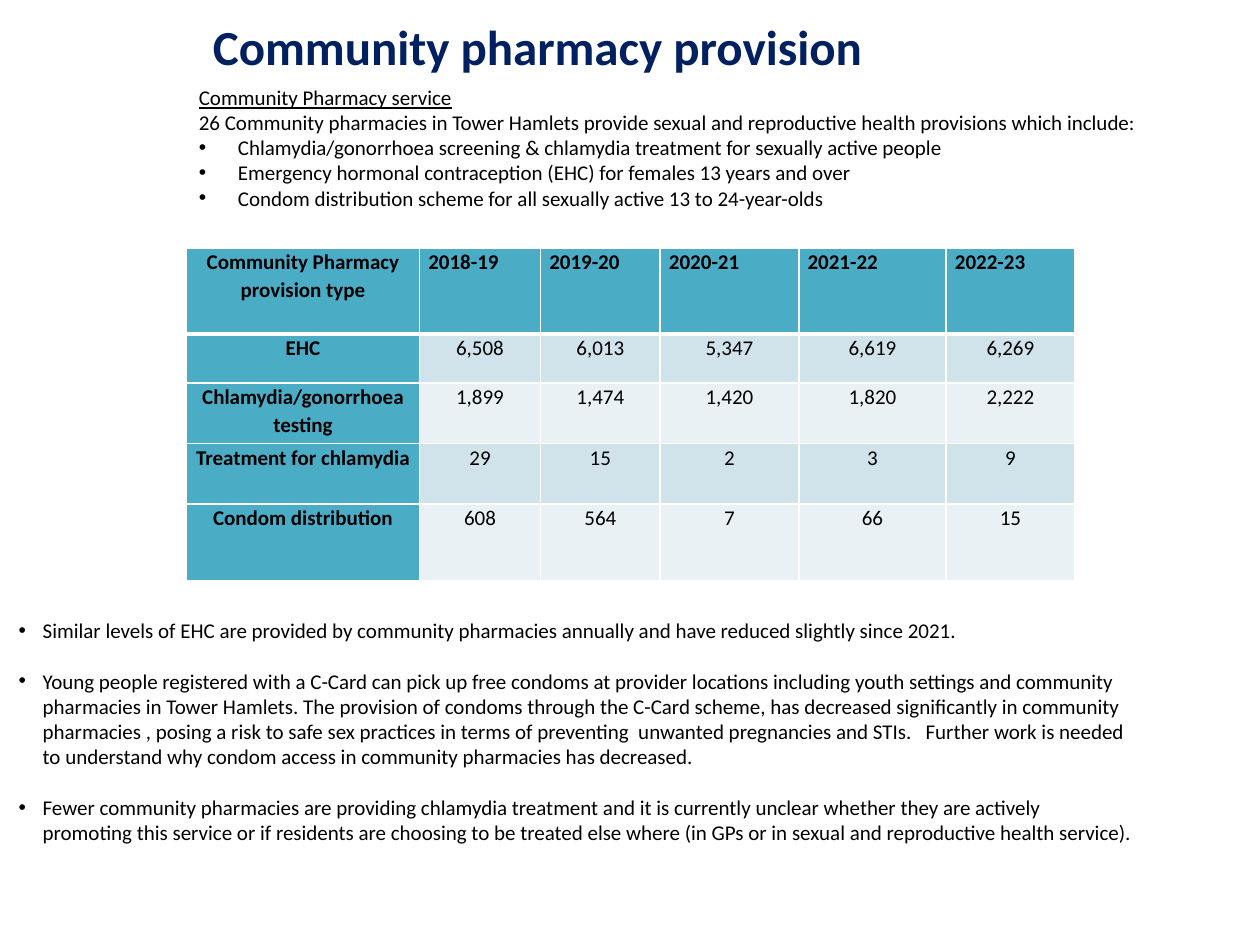
from dataclasses import dataclass

from lxml.etree import SubElement
from pptx import Presentation
from pptx.dml.color import RGBColor
from pptx.enum.text import MSO_ANCHOR, MSO_AUTO_SIZE, PP_ALIGN
from pptx.oxml.ns import qn
from pptx.slide import Slide
from pptx.table import _Cell
from pptx.util import Inches, Pt

FONT = "Calibri"
COLORS = {
    "title": "002060",
    "text": "000000",
    "border": "FFFFFF",
    "header": "4BACC6",
    "odd_row": "D0E3EA",
    "even_row": "E9F1F5",
}


@dataclass
class Box:
    left: float
    top: float
    width: float
    height: float

    def lengths(self) -> list:
        return [Inches(value) for value in (self.left, self.top, self.width, self.height)]


@dataclass
class Line:
    text: str
    indent: float = 0
    underline: bool = False
    space_before: float = 0


@dataclass
class TableRow:
    height: float
    cells: list[str]


INTRO_BOX = Box(1.48, 0.62, 8.06, 1.11)
INTRO = [
    Line("Community Pharmacy service", underline=True),
    Line("26 Community pharmacies in Tower Hamlets provide sexual and reproductive health provisions which include:"),
    Line("Chlamydia/gonorrhoea screening & chlamydia treatment for sexually active people", 0.31),
    Line("Emergency hormonal contraception (EHC) for females 13 years and over", 0.31),
    Line("Condom distribution scheme for all sexually active 13 to 24-year-olds", 0.31),
]

FINDINGS_BOX = Box(0.05, 4.85, 9.05, 2.12)
FINDINGS = [
    Line("Similar levels of EHC are provided by community pharmacies annually and have reduced slightly since 2021.", 0.19),
    Line(
        "Young people registered with a C-Card can pick up free condoms at provider locations including "
        "youth settings and community pharmacies in Tower Hamlets. The provision of condoms through the "
        "C-Card scheme, has decreased significantly in community pharmacies , posing a risk to safe sex "
        "practices in terms of preventing  unwanted pregnancies and STIs.   Further work is needed to "
        "understand why condom access in community pharmacies has decreased.",
        0.19,
        space_before=14.6,
    ),
    Line(
        "Fewer community pharmacies are providing chlamydia treatment and it is currently unclear whether "
        "they are actively  promoting this service or if residents are choosing to be treated else where "
        "(in GPs or in sexual and reproductive health service).",
        0.19,
        space_before=14.6,
    ),
]

TABLE_BOX = Box(1.48, 1.97, 7.05, 2.64)
COLUMN_WIDTHS = [1.85, 0.96, 0.95, 1.1, 1.17, 1.02]
TABLE_ROWS = [
    TableRow(0.68, ["Community Pharmacy provision type", "2018-19", "2019-20", "2020-21", "2021-22", "2022-23"]),
    TableRow(0.39, ["EHC", "6,508", "6,013", "5,347", "6,619", "6,269"]),
    TableRow(0.48, ["Chlamydia/gonorrhoea testing", "1,899", "1,474", "1,420", "1,820", "2,222"]),
    TableRow(0.48, ["Treatment for chlamydia", "29", "15", "2", "3", "9"]),
    TableRow(0.61, ["Condom distribution", "608", "564", "7", "66", "15"]),
]


def color(name: str) -> RGBColor:
    return RGBColor.from_string(COLORS[name])


def format_runs(paragraph, size: float, color_name: str, bold: bool = False, underline: bool = False) -> None:
    for run in paragraph.runs:
        run.font.name = FONT
        run.font.size = Pt(size)
        run.font.bold = bold
        run.font.underline = underline
        run.font.color.rgb = color(color_name)


def add_bullet(paragraph, indent: float) -> None:
    properties = paragraph._p.get_or_add_pPr()
    properties.set("marL", str(Inches(indent)))
    properties.set("indent", str(-Inches(indent)))
    SubElement(properties, qn("a:buFont"), typeface="Arial")
    SubElement(properties, qn("a:buChar"), char="•")


def add_title(slide: Slide, text: str, box: Box) -> None:
    title = slide.shapes.title
    title.left, title.top, title.width, title.height = box.lengths()
    text_frame = title.text_frame
    text_frame.text = text
    text_frame.auto_size = MSO_AUTO_SIZE.SHAPE_TO_FIT_TEXT
    paragraph = text_frame.paragraphs[0]
    paragraph.alignment = PP_ALIGN.LEFT
    format_runs(paragraph, 28, "title", bold=True)


def add_text(slide: Slide, box: Box, lines: list[Line]) -> None:
    text_frame = slide.shapes.add_textbox(*box.lengths()).text_frame
    text_frame.word_wrap = True
    text_frame.auto_size = MSO_AUTO_SIZE.SHAPE_TO_FIT_TEXT
    for index, line in enumerate(lines):
        paragraph = text_frame.add_paragraph() if index else text_frame.paragraphs[0]
        paragraph.text = line.text
        if line.space_before:
            paragraph.space_before = Pt(line.space_before)
        if line.indent:
            add_bullet(paragraph, line.indent)
        format_runs(paragraph, 12, "text", underline=line.underline)


def set_borders(cell: _Cell, row_index: int) -> None:
    widths = {
        "lnL": 1,
        "lnR": 1,
        "lnT": 3 if row_index == 1 else 1,
        "lnB": 3 if row_index == 0 else 1,
    }
    properties = cell._tc.get_or_add_tcPr()
    for side, width in widths.items():
        border = SubElement(properties, qn(f"a:{side}"), w=str(Pt(width)))
        fill = SubElement(border, qn("a:solidFill"))
        SubElement(fill, qn("a:srgbClr"), val=COLORS["border"])


def format_cell(cell: _Cell, text: str, row_index: int, column_index: int) -> None:
    is_header = row_index == 0 or column_index == 0
    set_borders(cell, row_index)
    cell.fill.solid()
    cell.fill.fore_color.rgb = color("header" if is_header else "odd_row" if row_index % 2 else "even_row")
    cell.margin_left = cell.margin_right = Inches(0.07)
    cell.margin_top = cell.margin_bottom = 0
    cell.vertical_anchor = MSO_ANCHOR.TOP
    cell.text_frame.text = text
    paragraph = cell.text_frame.paragraphs[0]
    is_year = row_index == 0 and column_index > 0
    paragraph.alignment = PP_ALIGN.LEFT if is_year else PP_ALIGN.CENTER
    paragraph.line_spacing = 1.07
    paragraph.space_after = Pt(8)
    format_runs(paragraph, 12, "text", bold=is_header)


def add_provision_table(slide: Slide) -> None:
    table = slide.shapes.add_table(len(TABLE_ROWS), len(COLUMN_WIDTHS), *TABLE_BOX.lengths()).table
    for column, width in zip(table.columns, COLUMN_WIDTHS):
        column.width = Inches(width)
    for row_index, row in enumerate(TABLE_ROWS):
        table.rows[row_index].height = Inches(row.height)
        for column_index, text in enumerate(row.cells):
            format_cell(table.cell(row_index, column_index), text, row_index, column_index)


def main() -> None:
    presentation = Presentation()
    presentation.slide_width = Inches(10)
    presentation.slide_height = Inches(7.5)
    slide = presentation.slides.add_slide(presentation.slide_layouts[5])
    add_title(slide, "Community pharmacy provision", Box(1.59, 0.08, 5.78, 0.57))
    add_text(slide, INTRO_BOX, INTRO)
    add_provision_table(slide)
    add_text(slide, FINDINGS_BOX, FINDINGS)
    presentation.save("out.pptx")


if __name__ == "__main__":
    main()
